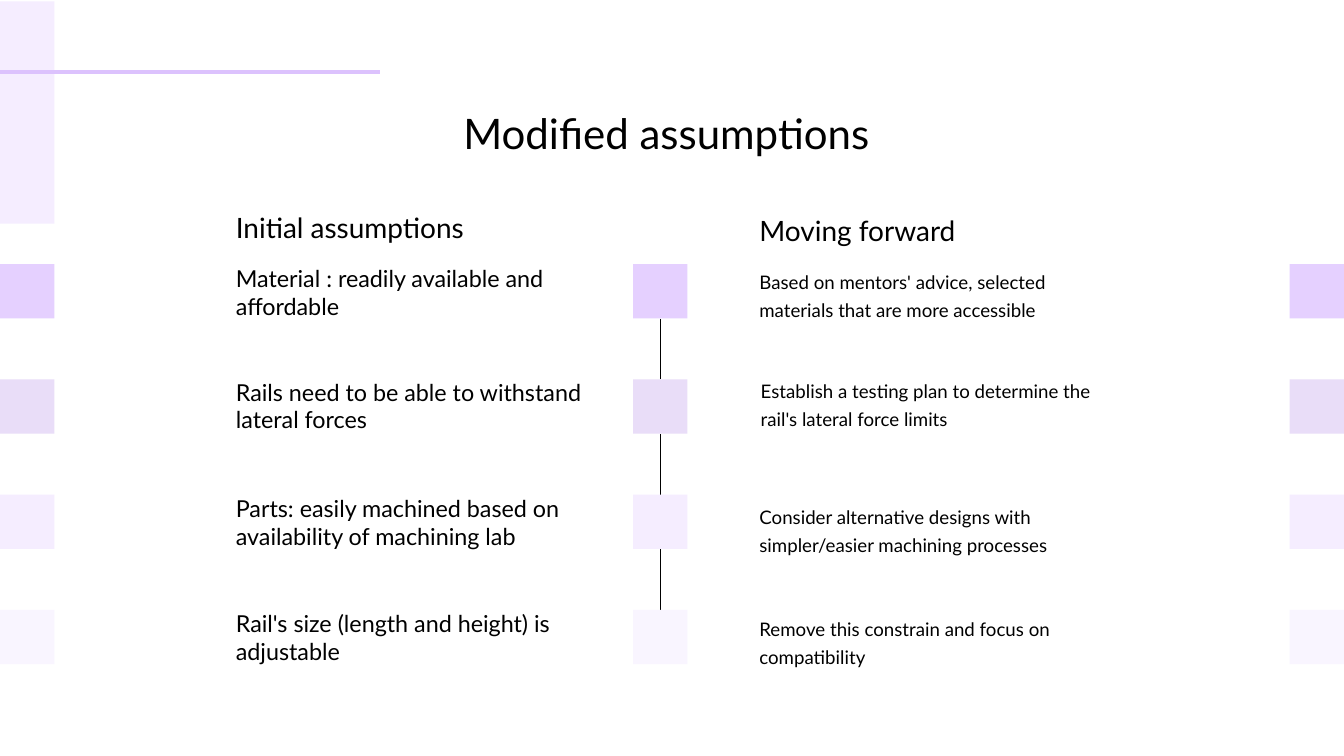
"""Build the slide that sets the initial assumptions beside the modified ones."""
from typing import NamedTuple, Optional

from lxml import etree
from pptx import Presentation
from pptx import util as u
from pptx.dml.color import RGBColor
from pptx.enum import shapes, text
from pptx.oxml import ns

FONT = "Lato"
COLORS = {
    "ink": "000000",
    "accent": "DCC2FD",
    "band": "F5EDFF",
    "row 1": "E5D0FF",
    "row 2": "E9DDF8",
    "row 3": "F5EDFF",
    "row 4": "F9F5FF",
}
SQUARE = 0.81
SQUARE_LEFTS = (9.42, 0, 19.19)
ROW_TOP, ROW_PITCH = 3.93, 1.715
TIMELINE_X = 9.83
LEFT_X, RIGHT_X, ITEM_WIDTH = 3.51, 11.3, 5.18


class Copy(NamedTuple):
    words: str
    left: float
    top: float
    width: float
    height: float
    size: float
    line_spacing: Optional[float] = None
    align: text.PP_ALIGN = text.PP_ALIGN.LEFT


TITLE = Copy("Modified assumptions ", 1.12, 1.48, 17.75, 1.72, 45, 63, text.PP_ALIGN.CENTER)
HEADINGS = {
    1: Copy("Initial assumptions ", LEFT_X, 3.05, 4.41, 0.53, 30, 42),
    3: Copy("Moving forward", RIGHT_X, 3.1, 7.3, 0.53, 30, 42),
}
ITEMS = (
    Copy("Material : readily available and affordable ", LEFT_X, 3.93, ITEM_WIDTH, 1.25, 25),
    Copy("Rails need to be able to withstand lateral forces ",
         LEFT_X, 5.63, ITEM_WIDTH, 0.81, 25, 29.4),
    Copy("Parts: easily machined based on availability of machining lab",
         LEFT_X, 7.35, ITEM_WIDTH, 1.21, 25),
    Copy("Rail's size (length and height) is adjustable", LEFT_X, 9.06, ITEM_WIDTH, 1.21, 25),
    Copy("Based on mentors' advice, selected materials that are more accessible ",
         RIGHT_X, 3.96, ITEM_WIDTH, 0.78, 20, 29.4),
    Copy("Establish a testing plan to determine the rail's lateral force limits ",
         11.32, 5.58, ITEM_WIDTH, 0.77, 20, 29.4),
    Copy("Consider alternative designs with simpler/easier machining processes ",
         RIGHT_X, 7.46, ITEM_WIDTH, 0.77, 20, 29.4),
    Copy("Remove this constrain and focus on compatibility ",
         RIGHT_X, 9.12, ITEM_WIDTH, 0.79, 20, 29.4),
)


def color(name: str) -> RGBColor:
    return RGBColor.from_string(COLORS[name])


def write(shape, entry: Copy) -> None:
    shape.left, shape.top = u.Inches(entry.left), u.Inches(entry.top)
    shape.width, shape.height = u.Inches(entry.width), u.Inches(entry.height)
    frame = shape.text_frame
    frame.margin_left = frame.margin_right = frame.margin_top = frame.margin_bottom = 0
    frame.word_wrap = True
    frame.auto_size = text.MSO_AUTO_SIZE.NONE
    frame.vertical_anchor = text.MSO_ANCHOR.TOP
    paragraph = frame.paragraphs[0]
    paragraph.alignment = entry.align
    paragraph.space_before = u.Pt(0)
    if entry.line_spacing:
        paragraph.line_spacing = u.Pt(entry.line_spacing)
    run = paragraph.add_run()
    run.text = entry.words
    run.font.name = FONT
    run.font.size = u.Pt(entry.size)
    run.font.bold = False
    run.font.color.rgb = color("ink")


def add_block(slide, left: float, top: float, width: float, height: float, fill: str) -> None:
    block = slide.shapes.add_shape(
        shapes.MSO_SHAPE.RECTANGLE,
        u.Inches(left), u.Inches(top), u.Inches(width), u.Inches(height))
    block.shadow.inherit = False
    block.fill.solid()
    block.fill.fore_color.rgb = color(fill)
    block.line.fill.background()


def add_line(slide, start: tuple[float, float], end: tuple[float, float],
             stroke: str, weight: float) -> None:
    line = slide.shapes.add_connector(
        shapes.MSO_CONNECTOR.STRAIGHT, *(u.Inches(value) for value in start + end))
    line.line.color.rgb = color(stroke)
    line.line.width = u.Pt(weight)
    etree.SubElement(line.element.spPr, ns.qn("a:effectLst"))


def main() -> None:
    presentation = Presentation()
    presentation.slide_width, presentation.slide_height = u.Inches(20), u.Inches(11.25)
    slide = presentation.slides.add_slide(
        presentation.slide_layouts.get_by_name("Comparison"))

    write(slide.shapes.title, TITLE)
    for placeholder in list(slide.placeholders):
        index = placeholder.placeholder_format.idx
        if index in HEADINGS:
            write(placeholder, HEADINGS[index])
        elif index:
            placeholder.element.getparent().remove(placeholder.element)

    add_block(slide, 0, 0.02, SQUARE, 3.31, "band")
    add_line(slide, (0, 1.07), (5.65, 1.07), "accent", 3.75)

    row_tops = [ROW_TOP + ROW_PITCH * row for row in range(4)]
    for top, next_top in zip(row_tops, row_tops[1:]):
        add_line(slide, (TIMELINE_X, top + SQUARE), (TIMELINE_X, next_top), "ink", 0.75)
    for row, top in enumerate(row_tops, start=1):
        for left in SQUARE_LEFTS:
            add_block(slide, left, top, SQUARE, SQUARE, f"row {row}")

    for item in ITEMS:
        write(slide.shapes.add_textbox(0, 0, 0, 0), item)

    presentation.save("out.pptx")


if __name__ == "__main__":
    main()
